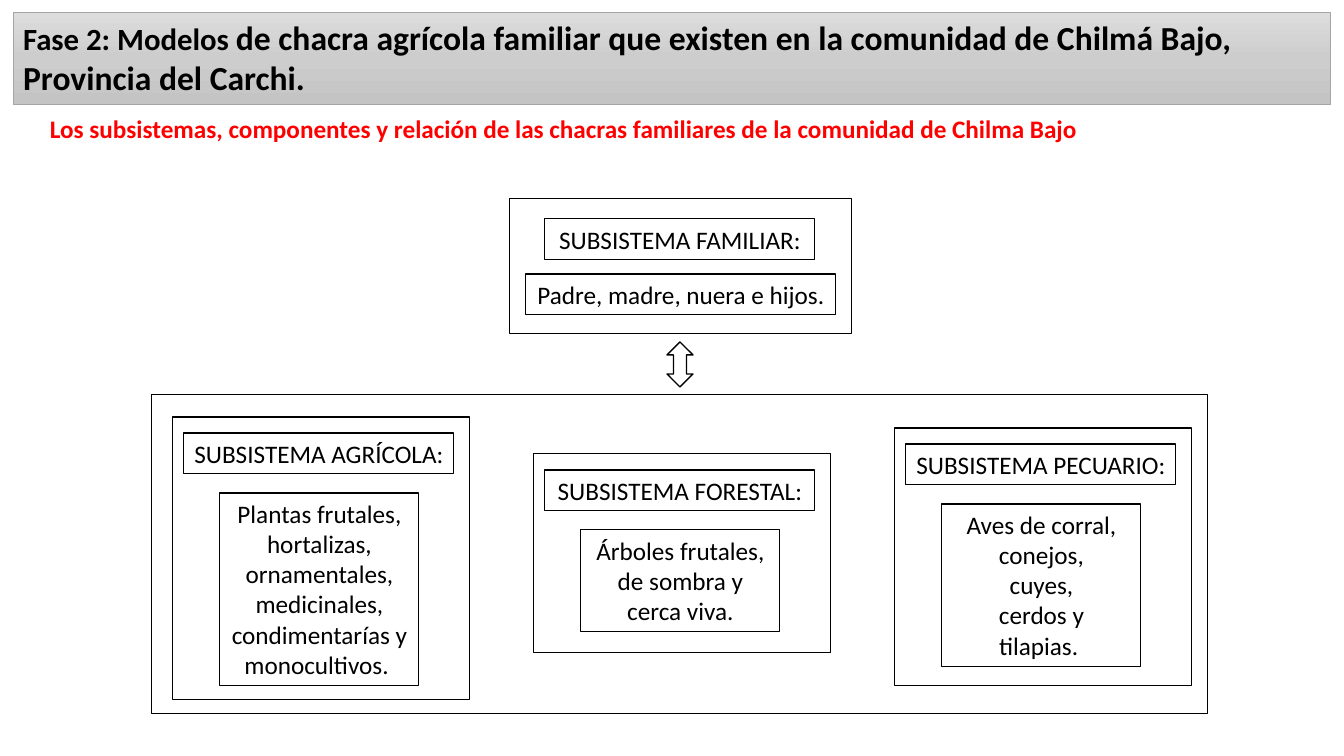
"""Build the slide on the subsystems of the family farms of Chilmá Bajo."""
import copy

import pptx
import pptx.dml.color
import pptx.enum.shapes
import pptx.enum.text
import pptx.util

SCALE = 12192000 / 1344
COLORS = {
    "text": "000000",
    "line": "000000",
    "heading": "FF0000",
    "arrow": "FFFFFF",
    "band_line": "A5A5A5",
    "band_top": "DDDDDD",
    "band_middle": "CDCDCD",
    "band_bottom": "C4C4C4",
}
SHAPES = pptx.enum.shapes.MSO_SHAPE
ALIGN = pptx.enum.text.PP_ALIGN


def color(name):
    return pptx.dml.color.RGBColor.from_string(COLORS[name])


def write(shape, text, size=18, bold=False, ink="text", align=ALIGN.CENTER,
          anchor=pptx.enum.text.MSO_ANCHOR.TOP):
    frame = shape.text_frame
    frame.word_wrap = True
    frame.auto_size = pptx.enum.text.MSO_AUTO_SIZE.SHAPE_TO_FIT_TEXT
    frame.vertical_anchor = anchor
    frame.text = text
    for paragraph in frame.paragraphs:
        paragraph.alignment = align
        for run in paragraph.runs:
            run.font.name = "Calibri"
            run.font.size = pptx.util.Pt(size)
            run.font.bold = bold
            run.font.color.rgb = color(ink)


def add_box(shapes, left, top, width, height, text="", kind=SHAPES.RECTANGLE, weight=0.75):
    box = shapes.add_shape(kind, *(round(length * SCALE) for length in (left, top, width, height)))
    box.shadow.inherit = False
    box.fill.background()
    box.line.color.rgb = color("line")
    box.line.width = pptx.util.Pt(weight)
    if text:
        write(box, text)
    return box


presentation = pptx.Presentation()
presentation.slide_width = round(1344 * SCALE)
presentation.slide_height = round(756 * SCALE)
slide = presentation.slides.add_slide(presentation.slide_layouts[5])

title = slide.shapes.title
title.left, title.top, title.width, title.height = (
    round(length * SCALE) for length in (13, 12, 1317, 92))
write(title, "Fase 2: Modelos ", size=22, bold=True, align=ALIGN.LEFT)
title_end = title.text_frame.paragraphs[0].add_run()
title_end.text = ("de chacra agrícola familiar que existen en la comunidad de Chilmá Bajo, "
                  "Provincia del Carchi.")
title_end.font.name = "Calibri"
title_end.font.size = pptx.util.Pt(24)
title_end.font.bold = True
title_end.font.color.rgb = color("text")
title.line.color.rgb = color("band_line")
title.line.width = pptx.util.Pt(0.5)

title.fill.gradient()
title.fill.gradient_angle = 270
first_stop = title.fill.gradient_stops[0]
first_stop._element.addnext(copy.deepcopy(first_stop._element)) if hasattr(
    first_stop, "_element") else first_stop._gs.addnext(copy.deepcopy(first_stop._gs))
for stop, position, name in zip(title.fill.gradient_stops, (0, 0.5, 1),
                                ("band_top", "band_middle", "band_bottom")):
    stop.position = position
    stop.color.rgb = color(name)

heading = slide.shapes.add_textbox(
    *(round(length * SCALE) for length in (40, 108, 1167, 40)))
write(heading, "Los subsistemas, componentes y relación de las chacras familiares "
      "de la comunidad de Chilma Bajo", bold=True, ink="heading", align=ALIGN.LEFT)

family = slide.shapes.add_group_shape().shapes
add_box(family, 510, 199, 342, 135)
add_box(family, 545, 219, 270, 41, "SUBSISTEMA FAMILIAR:")
add_box(family, 526, 274, 310, 41, "Padre, madre, nuera e hijos.")

subsystems = [
    (173, 417, 283, 193, "SUBSISTEMA AGRÍCOLA:",
     "Plantas frutales,\nhortalizas,\nornamentales,\nmedicinales,\n"
     "condimentarías y monocultivos. "),
    (534, 454, 199, 102, "SUBSISTEMA FORESTAL:",
     "Árboles frutales,\nde sombra y cerca viva."),
    (895, 428, 258, 163, "SUBSISTEMA PECUARIO:",
     "Aves de corral,\nconejos,\ncuyes,\ncerdos y\ntilapias. "),
]
farm = slide.shapes.add_group_shape().shapes
add_box(farm, 152, 395, 1056, 319)
for left, top, height, list_height, name, components in subsystems:
    add_box(farm, left, top, 297, height)
    add_box(farm, left + 11, top + 16, 270, 41, name)
    add_box(farm, left + 47, top + 76, 199, list_height, components)

arrow = add_box(slide.shapes, 667, 342, 26, 45, kind=SHAPES.UP_DOWN_ARROW, weight=1)
arrow.fill.solid()
arrow.fill.fore_color.rgb = color("arrow")

presentation.save("out.pptx")
